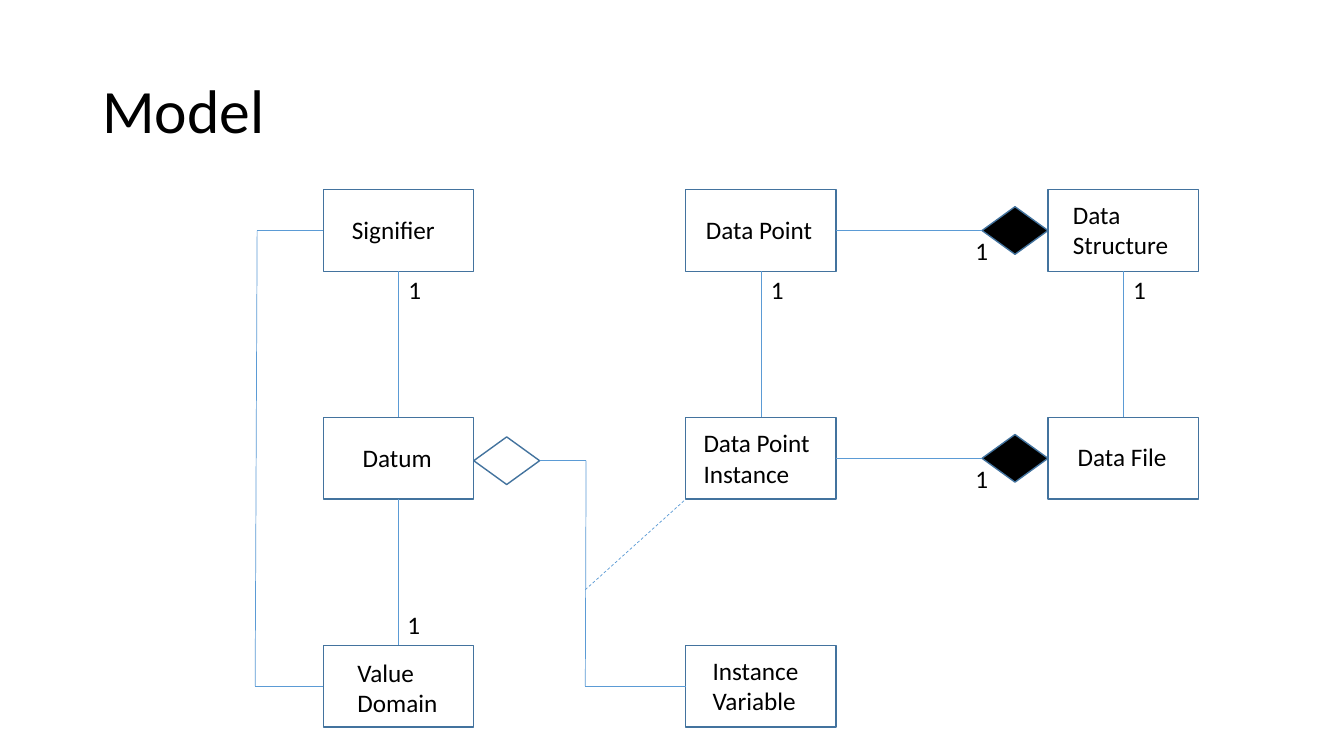
from dataclasses import dataclass

from lxml import etree
from pptx import Presentation
from pptx.dml.color import RGBColor
from pptx.enum.dml import MSO_LINE
from pptx.enum.shapes import MSO_CONNECTOR, MSO_SHAPE
from pptx.enum.text import MSO_ANCHOR
from pptx.oxml.ns import qn
from pptx.slide import Slide
from pptx.text.text import TextFrame
from pptx.util import Cm, Pt

RECTANGLE, DIAMOND = MSO_SHAPE.RECTANGLE, MSO_SHAPE.DIAMOND
STRAIGHT, DASH, MIDDLE = MSO_CONNECTOR.STRAIGHT, MSO_LINE.DASH, MSO_ANCHOR.MIDDLE


@dataclass(frozen=True)
class Theme:
    font: str = "Calibri"
    title_size: int = 44
    text_size: int = 18
    black: RGBColor = RGBColor(0x00, 0x00, 0x00)
    outline: RGBColor = RGBColor(0x43, 0x73, 0x9E)
    link: RGBColor = RGBColor(0x5B, 0x9B, 0xD5)
    outline_width: float = 1
    link_width: float = 0.5


@dataclass(frozen=True)
class Entity:
    """A class box; the label place is measured from the box's corner."""
    label: str
    column: int
    row: int
    label_left: float
    label_top: float
    label_width: float
    label_height: float = 1.02


@dataclass(frozen=True)
class Aggregation:
    center_x: float
    center_y: float
    filled: bool


@dataclass(frozen=True)
class Link:
    start: tuple[float, float]
    end: tuple[float, float]
    dashed: bool = False


THEME = Theme()

# All lengths are in centimetres.
BOX_WIDTH, BOX_HEIGHT = 3.79, 2.06
DIAMOND_WIDTH, DIAMOND_HEIGHT = 1.66, 1.2
LEFTS = [8.15 + 9.13 * column for column in range(3)]
TOPS = [4.78 + 5.74 * row for row in range(3)]
CENTERS = [left + BOX_WIDTH / 2 for left in LEFTS]
MIDDLES = [top + BOX_HEIGHT / 2 for top in TOPS]
RIGHTS = [left + BOX_WIDTH for left in LEFTS]
BOTTOMS = [top + BOX_HEIGHT for top in TOPS]

ENTITIES = [
    Entity("Signifier", 0, 0, 0.47, 0.5, 2.82),
    Entity("Datum", 0, 1, 0.74, 0.5, 2.29),
    Entity("Value Domain", 0, 2, 0.61, 0.17, 2.57, 1.8),
    Entity("Data Point", 1, 0, 0.26, 0.5, 3.25),
    Entity("Data Point Instance", 1, 1, 0.2, 0.13, 3.33, 1.8),
    Entity("Instance Variable", 1, 2, 0.43, 0.13, 2.9, 1.8),
    Entity("Data Structure", 2, 0, 0.38, 0.11, 3.02, 1.8),
    Entity("Data File", 2, 1, 0.5, 0.48, 2.8),
]

DATUM_DIAMOND_X = RIGHTS[0] + DIAMOND_WIDTH / 2
WHOLE_DIAMOND_X = LEFTS[2] - DIAMOND_WIDTH / 2
DATUM_LINK_Y = 11.61
AGGREGATIONS = [
    Aggregation(DATUM_DIAMOND_X, DATUM_LINK_Y, False),
    Aggregation(WHOLE_DIAMOND_X, MIDDLES[0], True),
    Aggregation(WHOLE_DIAMOND_X, MIDDLES[1], True),
]

WHOLE_DIAMOND_LEFT = LEFTS[2] - DIAMOND_WIDTH
BRACKET_TOP, BRACKET_BOTTOM = (6.48, MIDDLES[0]), (6.43, MIDDLES[2])
ELBOW_TOP, ELBOW_BOTTOM = (14.77, DATUM_LINK_Y), (14.75, MIDDLES[2])
LINKS = [
    Link((WHOLE_DIAMOND_LEFT, MIDDLES[0]), (RIGHTS[1], MIDDLES[0])),
    Link((WHOLE_DIAMOND_LEFT, MIDDLES[1]), (RIGHTS[1], MIDDLES[1])),
    Link((RIGHTS[0] + DIAMOND_WIDTH, DATUM_LINK_Y), ELBOW_TOP),
    Link(ELBOW_TOP, ELBOW_BOTTOM),
    Link((LEFTS[1], MIDDLES[2]), ELBOW_BOTTOM),
    Link((14.75, 14.86), (LEFTS[1], BOTTOMS[1]), dashed=True),
    Link((LEFTS[0], MIDDLES[0]), BRACKET_TOP),
    Link(BRACKET_TOP, BRACKET_BOTTOM),
    Link((LEFTS[0], MIDDLES[2]), BRACKET_BOTTOM),
    Link((CENTERS[0], BOTTOMS[1]), (CENTERS[0], TOPS[2])),
    *(Link((x, BOTTOMS[0]), (x, TOPS[1])) for x in CENTERS),
]

MULTIPLICITY_WIDTH, MULTIPLICITY_HEIGHT = 0.81, 1.02
MULTIPLICITIES = [
    *((x, BOTTOMS[0] - 0.06) for x in CENTERS),
    (CENTERS[0] - 0.03, TOPS[2] - MULTIPLICITY_HEIGHT),
    *((24.33, y) for y in MIDDLES[:2]),
]


def add_text(slide: Slide, text: str, left: float, top: float,
             width: float, height: float, size: int) -> TextFrame:
    text_box = slide.shapes.add_textbox(Cm(left), Cm(top), Cm(width), Cm(height))
    frame = text_box.text_frame
    frame.word_wrap = True
    frame.text = text
    font = frame.paragraphs[0].font
    font.name, font.size, font.color.rgb = THEME.font, Pt(size), THEME.black
    return frame


def add_outlined(slide: Slide, kind: MSO_SHAPE, left: float, top: float,
                 width: float, height: float, filled: bool = False) -> None:
    shape = slide.shapes.add_shape(kind, Cm(left), Cm(top), Cm(width), Cm(height))
    shape.shadow.inherit = False
    if filled:
        shape.fill.solid()
        shape.fill.fore_color.rgb = THEME.black
    else:
        shape.fill.background()
    shape.line.color.rgb = THEME.outline
    shape.line.width = Pt(THEME.outline_width)


def add_entity(slide: Slide, entity: Entity) -> None:
    left, top = LEFTS[entity.column], TOPS[entity.row]
    add_outlined(slide, RECTANGLE, left, top, BOX_WIDTH, BOX_HEIGHT)
    add_text(slide, entity.label, left + entity.label_left, top + entity.label_top,
             entity.label_width, entity.label_height, THEME.text_size)


def add_aggregation(slide: Slide, aggregation: Aggregation) -> None:
    add_outlined(slide, DIAMOND, aggregation.center_x - DIAMOND_WIDTH / 2,
                 aggregation.center_y - DIAMOND_HEIGHT / 2,
                 DIAMOND_WIDTH, DIAMOND_HEIGHT, aggregation.filled)


def add_link(slide: Slide, link: Link) -> None:
    points = [Cm(value) for value in (*link.start, *link.end)]
    connector = slide.shapes.add_connector(STRAIGHT, *points)
    connector.line.color.rgb = THEME.link
    connector.line.width = Pt(THEME.link_width)
    if link.dashed:
        connector.line.dash_style = DASH
    etree.SubElement(connector._element.spPr, qn("a:effectLst"))


def main() -> None:
    presentation = Presentation()
    presentation.slide_width, presentation.slide_height = Cm(33.87), Cm(19.05)
    slide = presentation.slides.add_slide(presentation.slide_layouts[6])

    title = add_text(slide, "Model", 2.33, 1.01, 29.21, 3.68, THEME.title_size)
    title.vertical_anchor = MIDDLE
    title.paragraphs[0].line_spacing = 0.9

    for entity in ENTITIES:
        add_entity(slide, entity)
    for aggregation in AGGREGATIONS:
        add_aggregation(slide, aggregation)
    for link in LINKS:
        add_link(slide, link)
    for left, top in MULTIPLICITIES:
        add_text(slide, "1", left, top, MULTIPLICITY_WIDTH, MULTIPLICITY_HEIGHT,
                 THEME.text_size)

    presentation.save("out.pptx")


if __name__ == "__main__":
    main()
